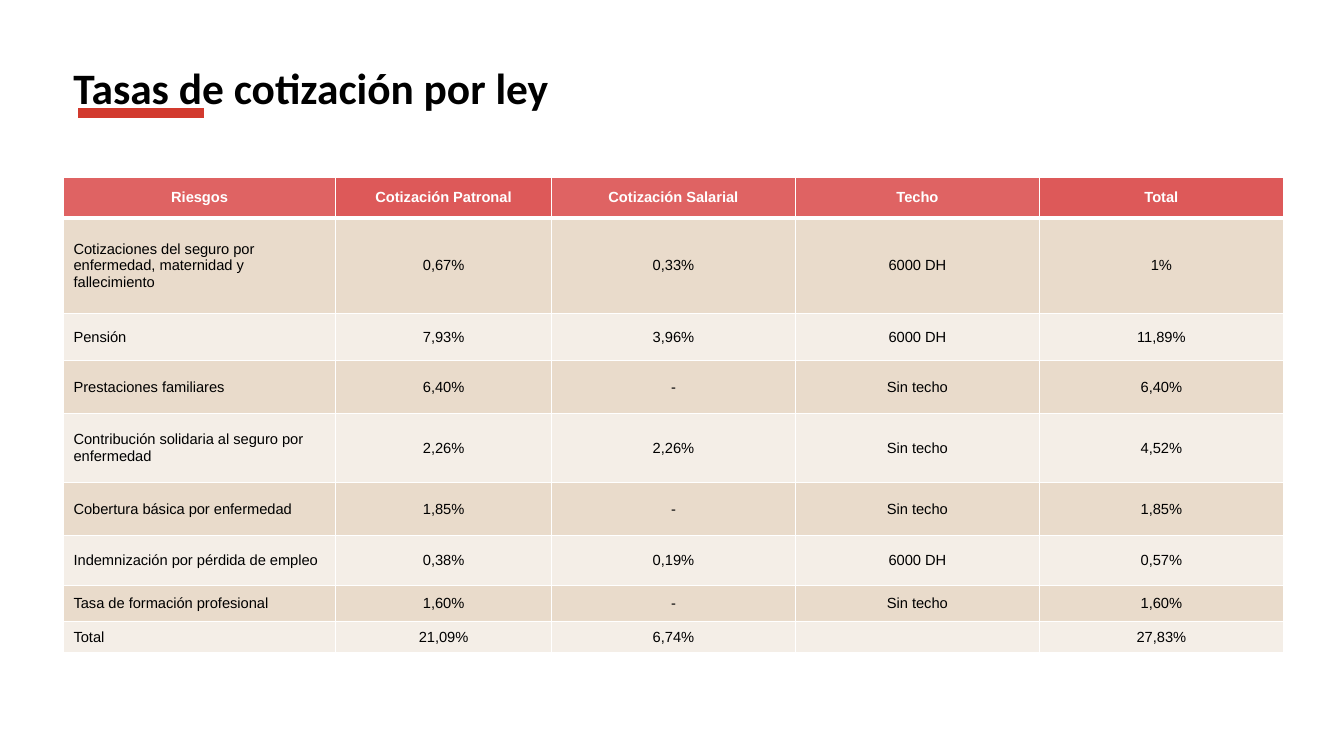
from lxml.etree import SubElement
from pptx import Presentation
from pptx.dml.color import RGBColor
from pptx.enum.shapes import MSO_SHAPE
from pptx.enum.text import MSO_ANCHOR, PP_ALIGN
from pptx.oxml import parse_xml
from pptx.oxml.ns import nsdecls, qn
from pptx.util import Pt

PX = 9144  # EMU per px, 100 px to the inch

BLACK = RGBColor(0x00, 0x00, 0x00)
WHITE = RGBColor(0xFF, 0xFF, 0xFF)
ACCENT_RED = RGBColor(0xD2, 0x3A, 0x2E)
HEADER_LIGHT = RGBColor(0xDF, 0x63, 0x63)
HEADER_DARK = RGBColor(0xDD, 0x59, 0x59)
BAND_DARK = RGBColor(0xE9, 0xDB, 0xCB)
BAND_LIGHT = RGBColor(0xF4, 0xEE, 0xE7)

HEADER_FILLS = [HEADER_LIGHT, HEADER_DARK, HEADER_LIGHT, HEADER_LIGHT, HEADER_DARK]
COLUMN_WIDTHS = [270, 214, 242, 242, 242]
ROW_HEIGHTS = [40, 95, 47, 52, 69, 52, 50, 36, 31]
TABLE_SIZE = 10.5
RATES = [
    ["Riesgos", "Cotización Patronal", "Cotización Salarial", "Techo", "Total"],
    ["Cotizaciones del seguro por enfermedad, maternidad y fallecimiento",
     "0,67%", "0,33%", "6000 DH", "1%"],
    ["Pensión", "7,93%", "3,96%", "6000 DH", "11,89%"],
    ["Prestaciones familiares", "6,40%", "-", "Sin techo", "6,40%"],
    ["Contribución solidaria al seguro por enfermedad",
     "2,26%", "2,26%", "Sin techo", "4,52%"],
    ["Cobertura básica por enfermedad", "1,85%", "-", "Sin techo", "1,85%"],
    ["Indemnización por pérdida de empleo", "0,38%", "0,19%", "6000 DH", "0,57%"],
    ["Tasa de formación profesional", "1,60%", "-", "Sin techo", "1,60%"],
    ["Total", "21,09%", "6,74%", "", "27,83%"],
]


def emu(*lengths):
    return [length * PX for length in lengths]


def style_runs(paragraph, font_name, size, color, bold):
    for run in paragraph.runs:
        run.font.name = font_name
        run.font.size = Pt(size)
        run.font.color.rgb = color
        run.font.bold = bold


def set_borders(cell, top, bottom):
    """White borders; top and bottom widths in points, sides 1 pt."""
    properties = cell._tc.get_or_add_tcPr()
    widths = [("lnL", 1), ("lnR", 1), ("lnT", top), ("lnB", bottom)]
    for position, (tag, width) in enumerate(widths):
        properties.insert(position, parse_xml(
            f'<a:{tag} {nsdecls("a")} w="{Pt(width)}"><a:solidFill>'
            f'<a:srgbClr val="{WHITE}"/></a:solidFill></a:{tag}>'))


def add_title(slide, left, top, width, height):
    title = slide.shapes.add_textbox(*emu(left, top, width, height))
    text_frame = title.text_frame
    text_frame.word_wrap = True
    text_frame.text = "Tasas de cotización por ley"
    style_runs(text_frame.paragraphs[0], "Calibri", 31, BLACK, True)


def add_title_bar(slide, left, top, width, height):
    bar = slide.shapes.add_shape(MSO_SHAPE.RECTANGLE, *emu(left, top, width, height))
    bar.shadow.inherit = False
    bar.fill.solid()
    bar.fill.fore_color.rgb = ACCENT_RED
    bar.line.color.rgb = WHITE
    bar.line.width = Pt(2)


def fill_cell(cell, text, row, column):
    is_header = row == 0
    cell.vertical_anchor = MSO_ANCHOR.MIDDLE
    cell.fill.solid()
    if is_header:
        cell.fill.fore_color.rgb = HEADER_FILLS[column]
    else:
        cell.fill.fore_color.rgb = BAND_DARK if row % 2 else BAND_LIGHT
    set_borders(cell, top=3 if row == 1 else 1, bottom=3 if is_header else 1)

    cell.text_frame.text = text
    paragraph = cell.text_frame.paragraphs[0]
    centered = is_header or column > 0
    paragraph.alignment = PP_ALIGN.CENTER if centered else PP_ALIGN.LEFT
    style_runs(paragraph, "Arial", TABLE_SIZE, WHITE if is_header else BLACK, is_header)
    if not text:  # keeps the empty cell from stretching its row
        SubElement(paragraph._p, qn("a:endParaRPr"), sz=str(int(TABLE_SIZE * 100)))


def add_rates_table(slide, left, top):
    box = emu(left, top, sum(COLUMN_WIDTHS), sum(ROW_HEIGHTS))
    table = slide.shapes.add_table(len(RATES), len(COLUMN_WIDTHS), *box).table
    for column, width in zip(table.columns, COLUMN_WIDTHS):
        column.width = width * PX
    for row, height in zip(table.rows, ROW_HEIGHTS):
        row.height = height * PX
    for row, texts in enumerate(RATES):
        for column, text in enumerate(texts):
            fill_cell(table.cell(row, column), text, row, column)


def main():
    presentation = Presentation()
    presentation.slide_width, presentation.slide_height = emu(1333, 750)
    slide = presentation.slides.add_slide(presentation.slide_layouts[6])
    # Heading
    add_title(slide, 63, 56, 1191, 120)
    # Contribution rates
    add_rates_table(slide, 63, 176)
    # Accent under the heading
    add_title_bar(slide, 76, 106, 128, 13)
    presentation.save("out.pptx")


if __name__ == "__main__":
    main()
